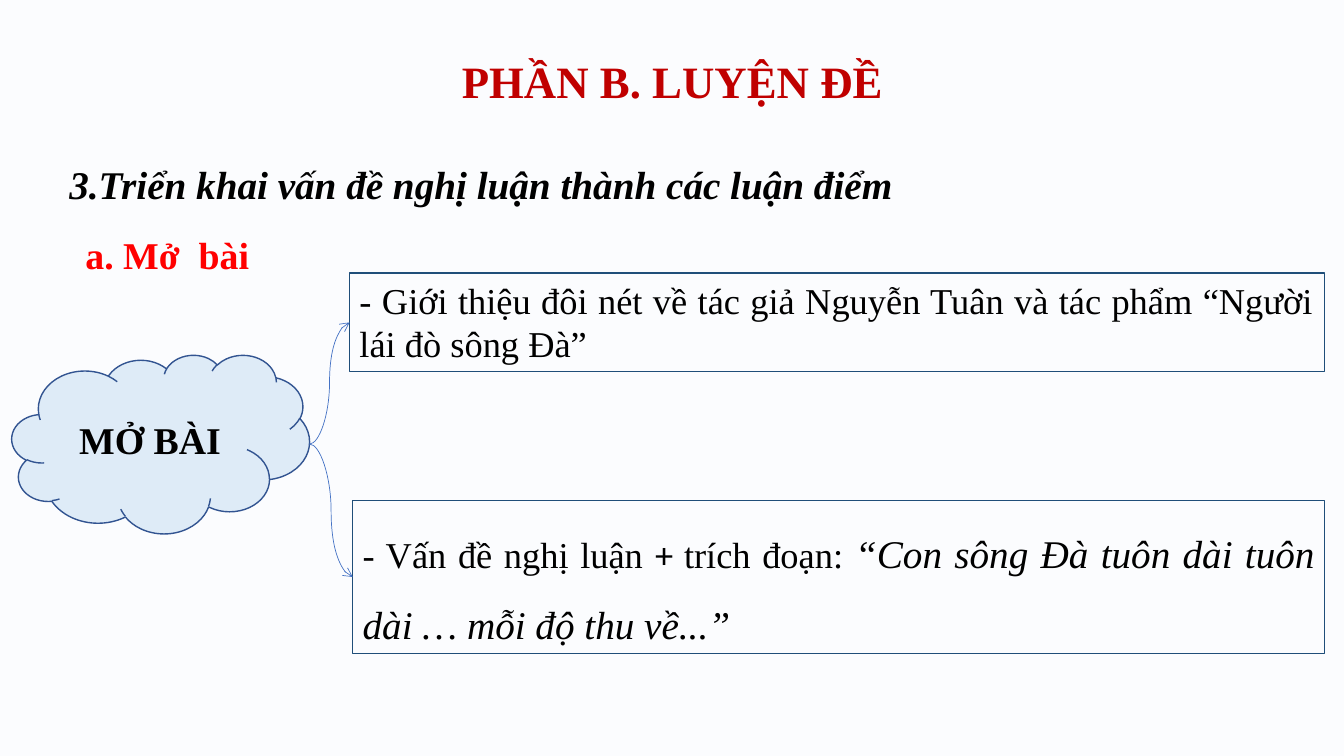
from dataclasses import dataclass

from lxml import etree
from pptx import Presentation
from pptx.dml.color import RGBColor
from pptx.enum.shapes import MSO_CONNECTOR, MSO_SHAPE
from pptx.enum.text import MSO_ANCHOR, MSO_AUTO_SIZE, PP_ALIGN
from pptx.oxml.ns import qn
from pptx.util import Cm, Pt

CURVE = MSO_CONNECTOR.CURVE
CLOUD, RECTANGLE = MSO_SHAPE.CLOUD, MSO_SHAPE.RECTANGLE
TOP, MIDDLE = MSO_ANCHOR.TOP, MSO_ANCHOR.MIDDLE
CENTER, JUSTIFY = PP_ALIGN.CENTER, PP_ALIGN.JUSTIFY
NO_FIT = MSO_AUTO_SIZE.NONE

BACKGROUND = RGBColor(0xFB, 0xFC, 0xFE)
DARK_RED = RGBColor(0xC0, 0x00, 0x00)
RED = RGBColor(0xFF, 0x00, 0x00)
BLACK = RGBColor(0x00, 0x00, 0x00)
BOX_LINE = RGBColor(0x1F, 0x4E, 0x79)
CLOUD_FILL = RGBColor(0xDE, 0xEB, 0xF7)
CLOUD_LINE = RGBColor(0x32, 0x54, 0x91)
ARROW_LINE = RGBColor(0x44, 0x72, 0xC4)

SERIF, SANS = "Times New Roman", "Calibri"
LEFT_SIDE = 1


@dataclass(frozen=True)
class Span:
    text: str
    size: float
    color: RGBColor = BLACK
    bold: bool = False
    italic: bool = False
    font: str = SERIF


@dataclass(frozen=True)
class Block:
    """Place (left, top, width, height in cm) and text of one element."""
    place: tuple[float, float, float, float]
    spans: tuple[Span, ...]
    align: PP_ALIGN = JUSTIFY
    spacing: float = 1.0
    anchor: MSO_ANCHOR = TOP
    wrap: bool = True


TITLE = Block((2.34, 1.02, 29.21, 2.18),
              (Span("PHẦN B. LUYỆN ĐỀ", 32, DARK_RED, bold=True),),
              CENTER, 0.9, MIDDLE)
HEADING = Block((1.5, 3.33, 30.43, 1.83),
                (Span("3.Triển khai vấn đề nghị luận thành các luận điểm", 28,
                      bold=True, italic=True),), spacing=1.5)
SECTION = Block((1.88, 5.72, 4.67, 1.42),
                (Span("a. Mở  bài", 27, RED, bold=True),), CENTER, wrap=False)
OPENING = Block((0.3, 8.94, 7.5, 4.5), (Span("MỞ BÀI", 27, bold=True),),
                CENTER, anchor=MIDDLE)
POINTS = (
    Block((8.81, 6.88, 24.56, 2.49),
          (Span("- Giới thiệu đôi nét về tác giả Nguyễn Tuân và tác phẩm "
                "“Người lái đò sông Đà”", 26),)),
    Block((8.89, 12.62, 24.49, 3.84),
          (Span("- Vấn đề nghị luận ", 26),
           Span("+ ", 26, font=SANS),
           Span("trích đoạn: ", 26),
           Span("“Con sông Đà tuôn dài tuôn dài … mỗi độ thu về...”", 28,
                italic=True)), spacing=1.5),
)


def write(box, block: Block) -> None:
    frame = box.text_frame
    frame.auto_size = NO_FIT
    frame.word_wrap = block.wrap
    frame.vertical_anchor = block.anchor
    para = frame.paragraphs[0]
    para.alignment = block.align
    para.line_spacing = block.spacing
    for span in block.spans:
        run = para.add_run()
        run.text = span.text
        run.font.name = span.font
        run.font.size = Pt(span.size)
        run.font.bold = span.bold
        run.font.italic = span.italic
        run.font.color.rgb = span.color


def add_text(page, block: Block) -> None:
    write(page.shapes.add_textbox(*map(Cm, block.place)), block)


def add_outlined(page, preset: MSO_SHAPE, block: Block, line: RGBColor,
                 weight: float, fill: RGBColor | None = None):
    shape = page.shapes.add_shape(preset, *map(Cm, block.place))
    shape.shadow.inherit = False
    if fill is None:
        shape.fill.background()
    else:
        shape.fill.solid()
        shape.fill.fore_color.rgb = fill
    shape.line.color.rgb = line
    shape.line.width = Pt(weight)
    write(shape, block)
    return shape


def add_arrow(page, cloud, target) -> None:
    start_x = cloud.left + cloud.width
    start_y = cloud.top + cloud.height // 2
    arrow = page.shapes.add_connector(CURVE, start_x, start_y,
                                      target.left, target.top)
    # Site 0 of a cloud is its right side, so the start is placed there again
    arrow.begin_connect(cloud, 0)
    arrow.begin_x, arrow.begin_y = start_x, start_y
    arrow.end_connect(target, LEFT_SIDE)
    arrow.line.color.rgb = ARROW_LINE
    arrow.line.width = Pt(0.5)
    etree.SubElement(arrow.line._get_or_add_ln(), qn("a:tailEnd"), type="arrow")
    etree.SubElement(arrow._element.spPr, qn("a:effectLst"))


def main() -> None:
    deck = Presentation()
    deck.slide_width, deck.slide_height = Cm(33.87), Cm(19.05)
    page = deck.slides.add_slide(deck.slide_layouts[5])
    page.background.fill.solid()
    page.background.fill.fore_color.rgb = BACKGROUND

    # Title and headings
    title = page.shapes.title
    title.left, title.top, title.width, title.height = map(Cm, TITLE.place)
    write(title, TITLE)
    add_text(page, HEADING)
    add_text(page, SECTION)

    # Cloud with an arrow to each point
    cloud = add_outlined(page, CLOUD, OPENING, CLOUD_LINE, 1, CLOUD_FILL)
    for point in POINTS:
        box = add_outlined(page, RECTANGLE, point, BOX_LINE, 0.75)
        add_arrow(page, cloud, box)

    deck.save("out.pptx")


if __name__ == "__main__":
    main()
